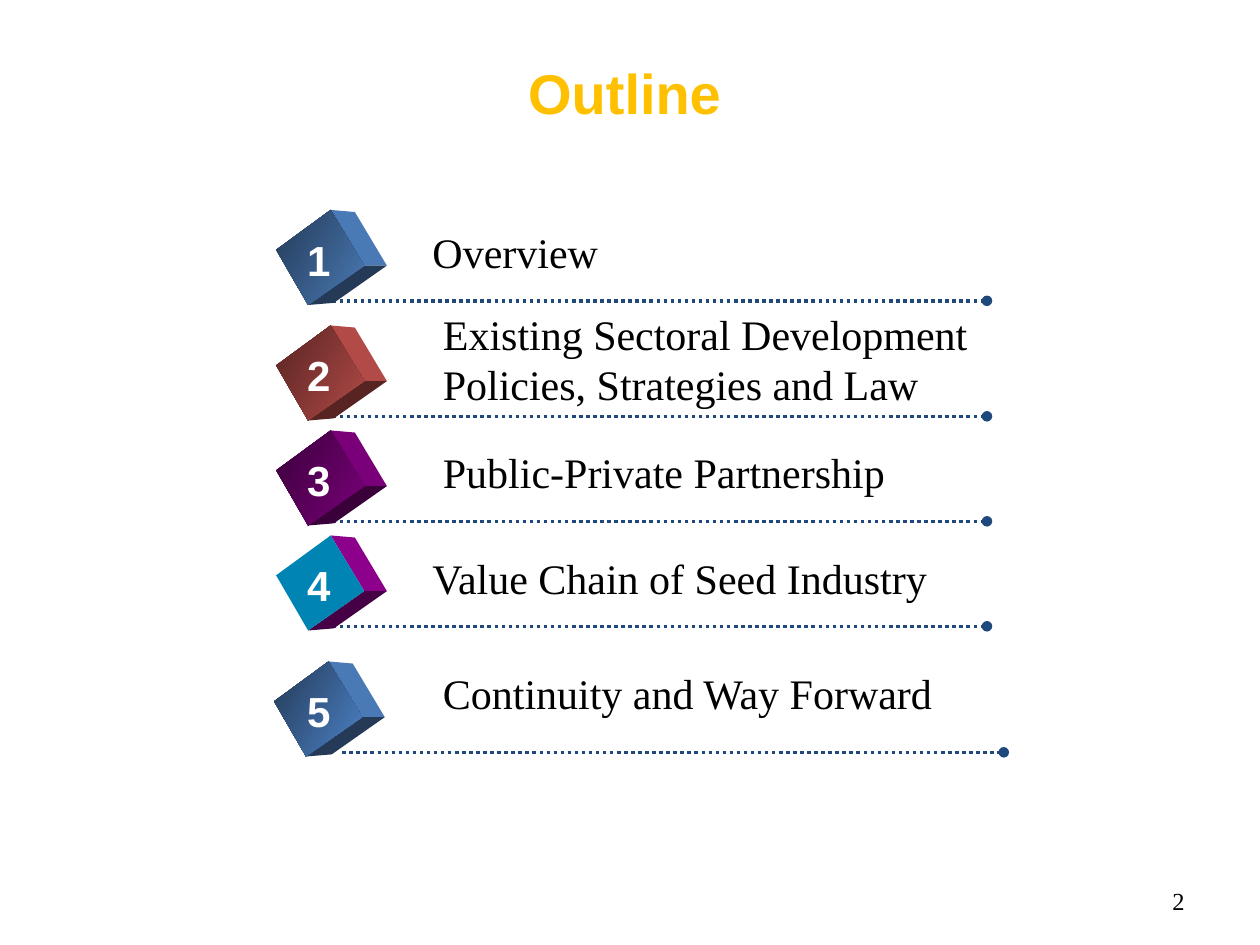
from typing import NamedTuple

from lxml.etree import SubElement
from pptx import Presentation
from pptx.dml.color import RGBColor
from pptx.enum.dml import MSO_LINE_DASH_STYLE as Dash
from pptx.enum.shapes import MSO_CONNECTOR as Connector
from pptx.enum.text import MSO_ANCHOR as Anchor, PP_ALIGN as Align
from pptx.oxml.ns import qn
from pptx.util import Inches, Pt

COLUMNS, ROWS = 120, 90
WIDTH, HEIGHT = Inches(10), Inches(7.5)
CELL = WIDTH // COLUMNS

GOLD = RGBColor(0xFF, 0xC0, 0x00)
WHITE = RGBColor(0xFF, 0xFF, 0xFF)
BLACK = RGBColor(0x00, 0x00, 0x00)
NAVY = RGBColor(0x1F, 0x49, 0x7D)
BLUE = RGBColor(0x4A, 0x7A, 0xB5)
BRIGHT_BLUE = RGBColor(0x4C, 0x82, 0xC6)
DARK_BLUE = RGBColor(0x24, 0x3A, 0x57)
RED = RGBColor(0xB2, 0x4A, 0x47)
DARK_RED = RGBColor(0x57, 0x24, 0x23)
PURPLE = RGBColor(0x7A, 0x00, 0x7A)
DARK_PURPLE = RGBColor(0x3A, 0x00, 0x3A)
MAGENTA = RGBColor(0x8C, 0x00, 0x8C)
DARK_MAGENTA = RGBColor(0x46, 0x00, 0x46)
CYAN = RGBColor(0x00, 0x84, 0xB4)

# Cube faces in grid cells from the cube's top left corner
FRONT = [(0, 3.8), (5.2, 0), (8.4, 5.3), (3.05, 9.05)]
SIDE = [(5.2, 0), (7.5, 0.2), (10.55, 5.3), (8.4, 5.3)]
BOTTOM = [(3.05, 9.05), (8.4, 5.3), (10.55, 5.3), (5.5, 8.85)]


class Topic(NamedTuple):
    text: str
    row: float
    text_column: float
    text_row: float
    front: tuple[RGBColor, RGBColor]
    side: RGBColor
    bottom: RGBColor
    cube_column: float = 26.3
    rule_column: float = 31
    text_rows: float = 6


TOPICS = [
    Topic("Overview", 20, 40, 21, (DARK_BLUE, BLUE), BLUE, DARK_BLUE),
    Topic("Existing Sectoral Development Policies, Strategies and Law",
          31, 41, 28.8, (DARK_RED, RED), RED, DARK_RED, text_rows=11),
    Topic("Public-Private Partnership", 41, 41, 41.9,
          (DARK_PURPLE, PURPLE), PURPLE, DARK_PURPLE),
    Topic("Value Chain of Seed Industry", 51, 40, 52,
          (CYAN, CYAN), MAGENTA, DARK_MAGENTA),
    Topic("Continuity and Way Forward", 63, 41, 63,
          (DARK_BLUE, BRIGHT_BLUE), BLUE, DARK_BLUE,
          cube_column=26.1, rule_column=32.6),
]


def cells(count: float) -> int:
    return round(count * CELL)


def write(box, text: str, *, size: float, color: RGBColor = BLACK,
          font: str = "Times New Roman", bold: bool = False,
          align=Align.LEFT, anchor=Anchor.TOP, wrap: bool = True) -> None:
    frame = box.text_frame
    frame.word_wrap = wrap
    frame.vertical_anchor = anchor
    para = frame.paragraphs[0]
    para.alignment = align
    span = para.add_run()
    span.text = text
    span.font.size = Pt(size)
    span.font.name = font
    span.font.bold = bold
    span.font.color.rgb = color


def add_text(page, text: str, column: float, row: float,
             columns: float, rows: float, **style) -> None:
    box = page.shapes.add_textbox(*map(cells, (column, row, columns, rows)))
    write(box, text, **style)


def add_face(page, corners, column: float, row: float,
             colors: tuple[RGBColor, RGBColor]) -> None:
    points = [(cells(column + x), cells(row + y)) for x, y in corners]
    builder = page.shapes.build_freeform(*points[0])
    builder.add_line_segments(points[1:], close=True)
    face = builder.convert_to_shape()
    face.shadow.inherit = False
    face.line.fill.background()
    if colors[0] == colors[1]:
        face.fill.solid()
        face.fill.fore_color.rgb = colors[0]
        return
    face.fill.gradient()
    face.fill.gradient_angle = 330
    for stop, color in zip(face.fill.gradient_stops, colors):
        stop.color.rgb = color


def add_rule(page, column: float, row: float) -> None:
    """Draw a dotted line that ends in a dot."""
    rule = page.shapes.add_connector(
        Connector.STRAIGHT, cells(column), cells(row),
        cells(column + 63), cells(row))
    rule.line.color.rgb = NAVY
    rule.line.width = Pt(2)
    rule.line.dash_style = Dash.ROUND_DOT
    properties = rule.line._get_or_add_ln()
    SubElement(properties, qn("a:tailEnd"), type="oval")
    SubElement(rule._element.spPr, qn("a:effectLst"))


def add_topic(page, number: int, topic: Topic) -> None:
    add_rule(page, topic.rule_column, topic.row + 8.65)
    for corners, colors in (
            (SIDE, (topic.side, topic.side)),
            (BOTTOM, (topic.bottom, topic.bottom)),
            (FRONT, topic.front)):
        add_face(page, corners, topic.cube_column, topic.row, colors)
    add_text(page, str(number), 28, topic.row + 1.7, 4.7, 6, size=24,
             font="Arial", color=WHITE, bold=True, align=Align.CENTER,
             wrap=False)
    add_text(page, topic.text, topic.text_column, topic.text_row, 62.8,
             topic.text_rows, size=24)


def main() -> None:
    deck = Presentation()
    deck.slide_width, deck.slide_height = WIDTH, HEIGHT
    page = deck.slides.add_slide(deck.slide_layouts[5])
    title = page.shapes.title
    title.left, title.top, title.width, title.height = map(
        cells, (41, 5, 37, 7.5))
    write(title, "Outline", size=32, font="Arial", color=GOLD, bold=True,
          align=Align.CENTER, anchor=Anchor.MIDDLE)
    for number, topic in enumerate(TOPICS, start=1):
        add_topic(page, number, topic)
    add_text(page, "2", 86, 83.4, 28, 4.8, size=14, align=Align.RIGHT,
             anchor=Anchor.MIDDLE)
    deck.save("out.pptx")


if __name__ == "__main__":
    main()
